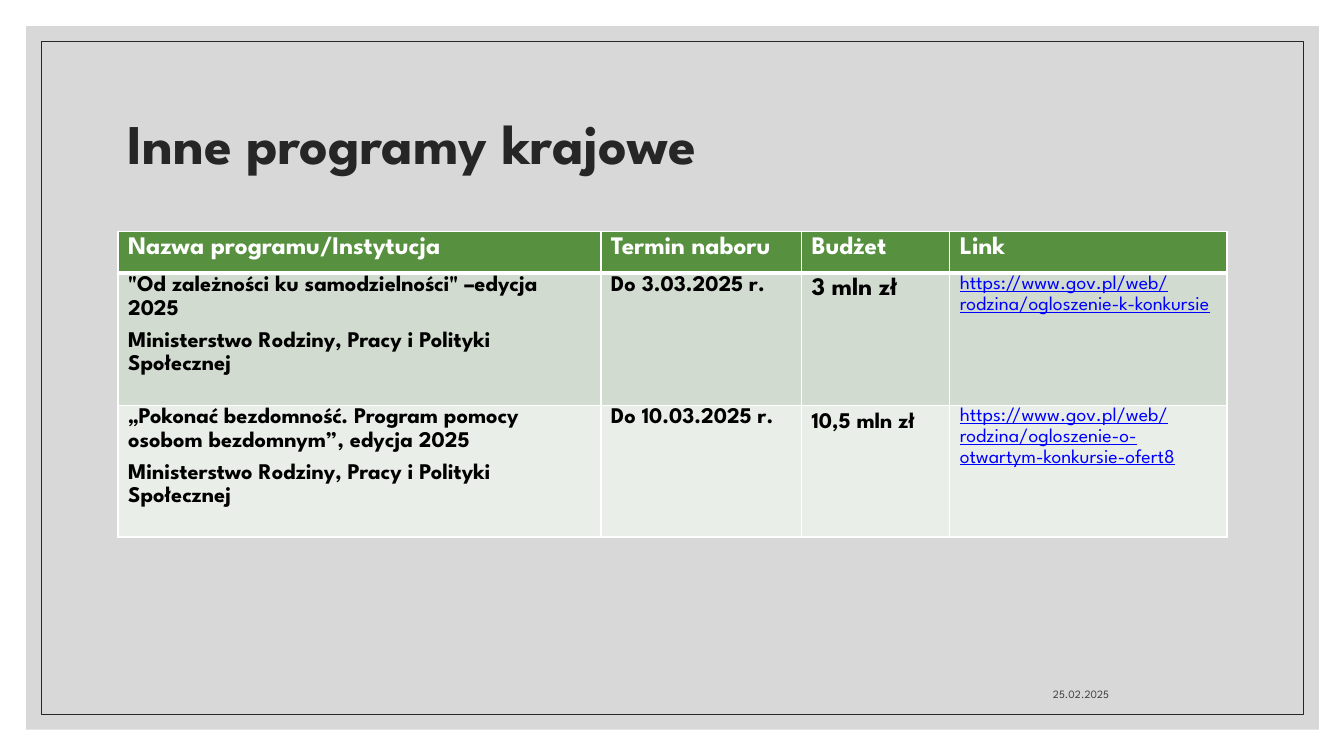
from dataclasses import dataclass

from lxml import etree
from pptx import Presentation
from pptx import util as u
from pptx.dml.color import RGBColor
from pptx.enum import shapes, text
from pptx.oxml import ns


@dataclass(frozen=True)
class Theme:
    font: str = "League Spartan"
    white: str = "FFFFFF"
    panel: str = "BFBFBF"
    dark: str = "262626"
    date: str = "404040"
    black: str = "000000"
    link: str = "0000FF"
    header: str = "57903F"
    bands: tuple = ("D1DBCF", "EAEEE8")
    title_size: int = 40
    large: int = 18
    body: int = 16
    small: int = 14
    date_size: int = 8


theme = Theme()


def write(frame, lines, size, color, paragraph_format=None, **font_format):
    """Fill a text frame with one paragraph per line, all formatted alike."""
    for index, line in enumerate(lines):
        paragraph = frame.paragraphs[0] if index == 0 else frame.add_paragraph()
        for name, value in (paragraph_format or {}).items():
            setattr(paragraph, name, value)
        run = paragraph.add_run()
        run.text = line
        for name, value in {"name": theme.font, "size": u.Pt(size), **font_format}.items():
            setattr(run.font, name, value)
        run.font.color.rgb = RGBColor.from_string(color)


def add_borders(cell, widths):
    """Draw white cell borders; widths maps each side (L, R, T, B) to points."""
    properties = cell._tc.get_or_add_tcPr()
    for index, (side, width) in enumerate(widths.items()):
        line = etree.Element(ns.qn(f"a:ln{side}"), w=str(u.Pt(width)))
        fill = etree.SubElement(line, ns.qn("a:solidFill"))
        etree.SubElement(fill, ns.qn("a:srgbClr"), val=theme.white)
        properties.insert(index, line)


presentation = Presentation()
presentation.slide_width = u.Inches(13.33)
presentation.slide_height = u.Inches(7.5)
slide = presentation.slides.add_slide(presentation.slide_layouts[6])

# Background panel and thin frame
panel, frame = [
    slide.shapes.add_shape(shapes.MSO_SHAPE.RECTANGLE, *map(u.Inches, box))
    for box in ((0.26, 0.26, 12.82, 6.98), (0.41, 0.41, 12.52, 6.68))
]
for shape in (panel, frame):
    shape.shadow.inherit = False
panel.fill.solid()
panel.fill.fore_color.rgb = RGBColor.from_string(theme.panel)
panel_color = panel.fill._xPr.find(ns.qn("a:solidFill"))[0]
etree.SubElement(panel_color, ns.qn("a:alpha"), val="60000")
panel.line.fill.background()
frame.fill.background()
frame.line.color.rgb = RGBColor.from_string(theme.dark)
frame.line.width = u.Pt(0.5)

# Title and date
labels = [
    ("Inne programy krajowe", (1.17, 0.7, 11, 1.5), text.MSO_ANCHOR.MIDDLE,
     theme.title_size, theme.dark, {"line_spacing": 0.9}, True),
    ("25.02.2025", (7.94, 6.6, 3.16, 0.4), text.MSO_ANCHOR.BOTTOM,
     theme.date_size, theme.date, {"alignment": text.PP_ALIGN.RIGHT}, False),
]
for label, box, anchor, size, color, paragraph_format, bold in labels:
    text_frame = slide.shapes.add_textbox(*map(u.Inches, box)).text_frame
    text_frame.word_wrap = True
    text_frame.vertical_anchor = anchor
    write(text_frame, [label], size, color, paragraph_format, bold=bold)

# Programme table
ministry = "Ministerstwo Rodziny, Pracy i Polityki Społecznej"
headings = ["Nazwa programu/Instytucja", "Termin naboru", "Budżet", "Link"]
programmes = [
    (['"Od zależności ku samodzielności" –edycja 2025', ministry],
     ["Do 3.03.2025 r."], ["3 mln zł"],
     ["https://www.gov.pl/web/rodzina/ogloszenie-k-konkursie"]),
    (["„Pokonać bezdomność. Program pomocy osobom bezdomnym”, edycja 2025", ministry],
     ["Do 10.03.2025 r."], ["10,5 mln zł"],
     ["https://www.gov.pl/web/rodzina/ogloszenie-o-otwartym-konkursie-ofert8"]),
]
column_widths = [4.79, 1.99, 1.47, 2.75]
row_heights = [0.41, 1.25, 1.02]
budget_column, link_column = 2, 3
spaced = {"line_spacing": 1.15, "space_before": u.Pt(6)}

table = slide.shapes.add_table(
    len(row_heights), len(column_widths), u.Inches(1.17), u.Inches(2.3),
    u.Inches(sum(column_widths)), u.Inches(sum(row_heights))).table
for column, width in zip(table.columns, column_widths):
    column.width = u.Inches(width)
for row, height in zip(table.rows, row_heights):
    row.height = u.Inches(height)

for row_index, fill in enumerate((theme.header, *theme.bands)):
    for column_index, heading in enumerate(headings):
        cell = table.cell(row_index, column_index)
        cell.fill.solid()
        cell.fill.fore_color.rgb = RGBColor.from_string(fill)
        add_borders(cell, {"L": 1, "R": 1, "T": 3 if row_index == 1 else 1,
                           "B": 3 if row_index == 0 else 1})
        if row_index == 0:
            write(cell.text_frame, [heading], theme.large, theme.white, bold=True)
            continue
        lines = programmes[row_index - 1][column_index]
        if column_index != budget_column:
            cell.margin_top = cell.margin_bottom = 0
        if column_index == link_column:
            write(cell.text_frame, lines, theme.small, theme.link, spaced,
                  bold=False, underline=True)
        elif column_index == budget_column and row_index == 1:
            write(cell.text_frame, lines, theme.large, theme.black, bold=True)
        else:
            write(cell.text_frame, lines, theme.body, theme.black, spaced, bold=True)

presentation.save("out.pptx")
